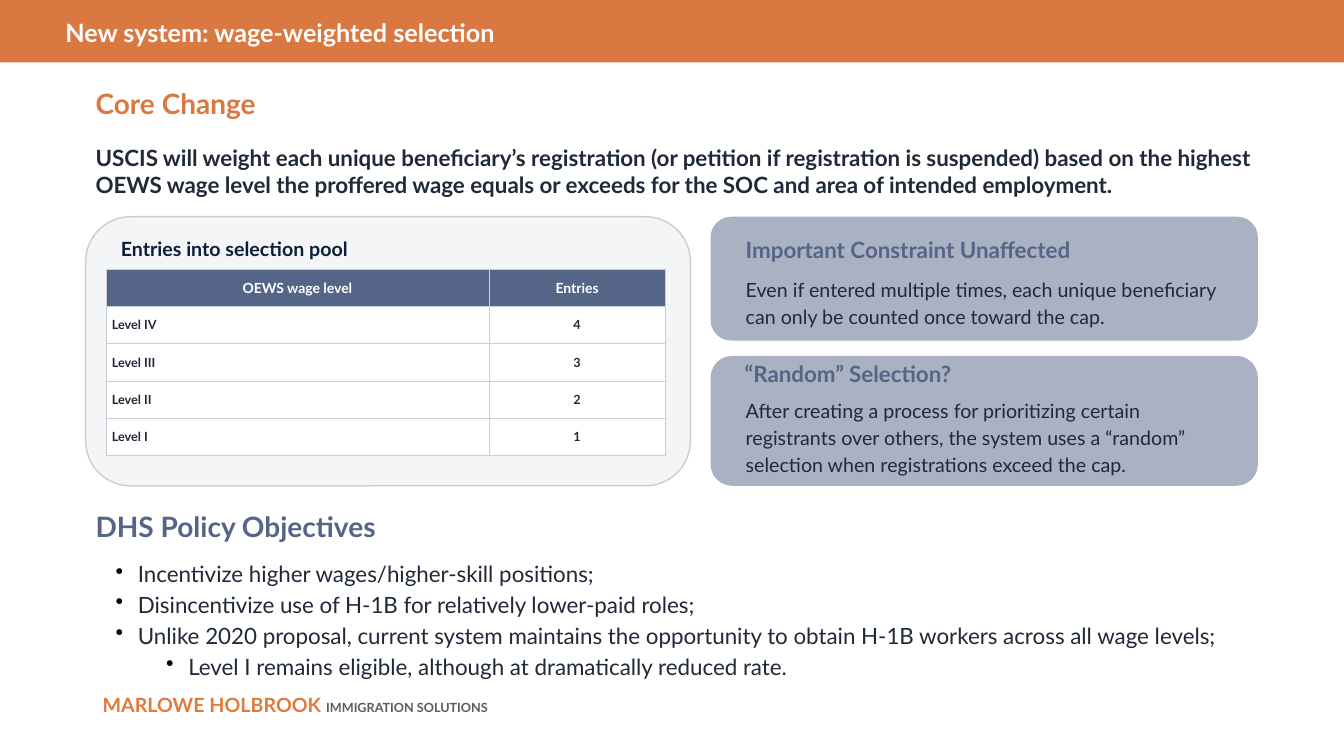
import pptx
import pptx.dml.color
import pptx.enum.shapes
import pptx.enum.text
import pptx.oxml
import pptx.oxml.ns
import pptx.util
from collections import namedtuple

Pt = pptx.util.Pt
RGBColor = pptx.dml.color.RGBColor
Align = pptx.enum.text.PP_ALIGN
Anchor = pptx.enum.text.MSO_ANCHOR
Preset = pptx.enum.shapes.MSO_SHAPE
Box = namedtuple("Box", "left top width height")

FONT = "Lato"
ORANGE = RGBColor(0xDA, 0x78, 0x41)
FIRM_ORANGE = RGBColor(0xE2, 0x7A, 0x3D)
FIRM_GREY = RGBColor(0x5A, 0x5B, 0x64)
SLATE = RGBColor(0x54, 0x65, 0x87)
INK = RGBColor(0x1F, 0x29, 0x37)
NAVY = RGBColor(0x0B, 0x1F, 0x3A)
PALE = RGBColor(0xF3, 0xF5, 0xF7)
RULE = RGBColor(0xC9, 0xCE, 0xD6)
WHITE = RGBColor(0xFF, 0xFF, 0xFF)

WAGE_ROWS = [
    ("OEWS wage level", "Entries"),
    ("Level IV", "4"),
    ("Level III", "3"),
    ("Level II", "2"),
    ("Level I", "1"),
]
OBJECTIVES = [
    ("Incentivize higher wages/higher‑skill positions;", 0),
    ("Disincentivize use of H‑1B for relatively lower‑paid roles;", 0),
    ("Unlike 2020 proposal, current system maintains the opportunity to obtain "
     "H‑1B workers across all wage levels;", 0),
    ("Level I remains eligible, although at dramatically reduced rate.", 1),
]


def inside(box, dx, dy, width, height):
    return Box(box.left + dx, box.top + dy, width, height)


def points(box):
    return [Pt(length) for length in box]


def add_xml(parent, body):
    parent.append(pptx.oxml.parse_xml(
        body.replace(" ", f" {pptx.oxml.ns.nsdecls('a')} ", 1)))


def style(font, size, color, bold=False):
    font.name = FONT
    font.size = Pt(size)
    font.bold = bold
    font.color.rgb = color


def text_frame(slide, box, anchor=Anchor.TOP):
    frame = slide.shapes.add_textbox(*points(box)).text_frame
    frame.word_wrap = True
    frame.vertical_anchor = anchor
    return frame


def add_text(slide, box, wording, size, color, bold=True,
             anchor=Anchor.MIDDLE, spacing=None):
    line = text_frame(slide, box, anchor).paragraphs[0]
    line.text = wording
    if spacing:
        line.line_spacing = spacing
    style(line.font, size, color, bold)


def add_panel(slide, box, preset, fill, outline=None, opacity=None):
    panel = slide.shapes.add_shape(preset, *points(box))
    panel.shadow.inherit = False
    panel.fill.solid()
    panel.fill.fore_color.rgb = fill
    if opacity:
        shade = panel.fill._xPr.find(".//" + pptx.oxml.ns.qn("a:srgbClr"))
        add_xml(shade, f'<a:alpha val="{opacity * 1000}"/>')
    if outline:
        panel.line.color.rgb = outline
        panel.line.width = Pt(1)
    else:
        panel.line.fill.background()


def add_footer(slide, box):
    signature = text_frame(slide, box).paragraphs[0]
    for wording, size, color in [("MARLOWE HOLBROOK ", 14, FIRM_ORANGE),
                                 ("IMMIGRATION SOLUTIONS", 9, FIRM_GREY)]:
        run = signature.add_run()
        run.text = wording
        style(run.font, size, color, True)


def add_header(slide, box, title):
    add_panel(slide, box, Preset.RECTANGLE, ORANGE)
    add_text(slide, inside(box, 39.6, 10.08, 878.4, 25.92), title, 18, WHITE)


def add_core_change(slide, box):
    add_text(slide, inside(box, 0, 0, box.width, 25.2), "Core Change", 20, ORANGE)
    add_text(slide, inside(box, 0, 36, box.width, 50.4),
             "USCIS will weight each unique beneficiary’s registration (or petition if "
             "registration is suspended) based on the highest OEWS wage level the "
             "proffered wage equals or exceeds for the SOC and area of intended "
             "employment.", 16, INK)


def fill_cell(cell, wording, size, color, fill, alignment):
    cell.margin_left = cell.margin_right = Pt(4.32)
    cell.margin_top = cell.margin_bottom = Pt(2.16)
    cell.vertical_anchor = Anchor.MIDDLE
    for side in "LRTB":
        add_xml(cell._tc.get_or_add_tcPr(),
                f'<a:ln{side} w="{Pt(0.5)}"><a:solidFill><a:srgbClr val="{RULE}"/>'
                f'</a:solidFill></a:ln{side}>')
    cell.fill.solid()
    cell.fill.fore_color.rgb = fill
    entry = cell.text_frame.paragraphs[0]
    entry.text = wording
    entry.alignment = alignment
    style(entry.font, size, color, True)


def add_selection_pool(slide, box):
    add_panel(slide, box, Preset.ROUNDED_RECTANGLE, PALE, outline=RULE)
    add_text(slide, inside(box, 18, 12.24, 396, 21.6),
             "Entries into selection pool", 14, NAVY)
    table_box = inside(box, 14.4, 37.44, 399.6, 133.2)
    wages = slide.shapes.add_table(len(WAGE_ROWS), 2, *points(table_box)).table
    for column, width in zip(wages.columns, (273.6, 126)):
        column.width = Pt(width)
    for r, row in enumerate(WAGE_ROWS):
        wages.rows[r].height = Pt(table_box.height / len(WAGE_ROWS))
        size, color, fill = (9, INK, WHITE) if r else (10, WHITE, SLATE)
        for c, wording in enumerate(row):
            alignment = Align.LEFT if r and c == 0 else Align.CENTER
            fill_cell(wages.cell(r, c), wording, size, color, fill, alignment)


def add_note(slide, box, heading, body, heading_at, body_at):
    add_panel(slide, box, Preset.ROUNDED_RECTANGLE, SLATE, opacity=50)
    add_text(slide, inside(box, *heading_at, 354.96, 21.6), heading, 16, SLATE)
    add_text(slide, inside(box, *body_at, 354.96, box.height - body_at[1]),
             body, 14, INK, False, Anchor.TOP, 1.15)


def add_objectives(slide, box):
    add_text(slide, inside(box, 0, 0, box.width, 36),
             "DHS Policy Objectives", 20, SLATE)
    frame = text_frame(slide, inside(box, 14.4, 36, 856.8, 118.8))
    for i, (wording, level) in enumerate(OBJECTIVES):
        objective = frame.add_paragraph() if i else frame.paragraphs[0]
        objective.text = wording
        objective.level = level
        objective.line_spacing = 1.15
        properties = objective._p.get_or_add_pPr()
        properties.set("marL", str(Pt(15.84 + 36 * level)))
        properties.set("indent", str(Pt(-15.84)))
        add_xml(properties, '<a:buClr ><a:srgbClr val="000000"/></a:buClr>')
        add_xml(properties, '<a:buChar char="•"/>')
        style(objective.font, 16, INK)


def main():
    deck = pptx.Presentation()
    deck.slide_width, deck.slide_height = Pt(960), Pt(540)
    slide = deck.slides.add_slide(deck.slide_layouts[6])
    add_footer(slide, Box(66.24, 491.76, 475.2, 46.08))
    add_header(slide, Box(0, 0, 960, 44.64), "New system: wage‑weighted selection")
    add_core_change(slide, Box(61.2, 61.2, 864, 86.4))
    add_selection_pool(slide, Box(61.2, 154.8, 432, 192.24))
    add_note(slide, Box(507.6, 154.8, 390.96, 88.56),
             "Important Constraint Unaffected",
             "Even if entered multiple times, each unique beneficiary can only be "
             "counted once toward the cap.", (18, 12.96), (18, 37.44))
    add_note(slide, Box(507.6, 254.16, 390.96, 92.88),
             "“Random” Selection?",
             "After creating a process for prioritizing certain registrants over "
             "others, the system uses a “random” selection when registrations exceed "
             "the cap.", (17.28, 2.16), (18, 24.48))
    add_objectives(slide, Box(61.2, 357.84, 878.4, 154.8))
    deck.save("out.pptx")


if __name__ == "__main__":
    main()
